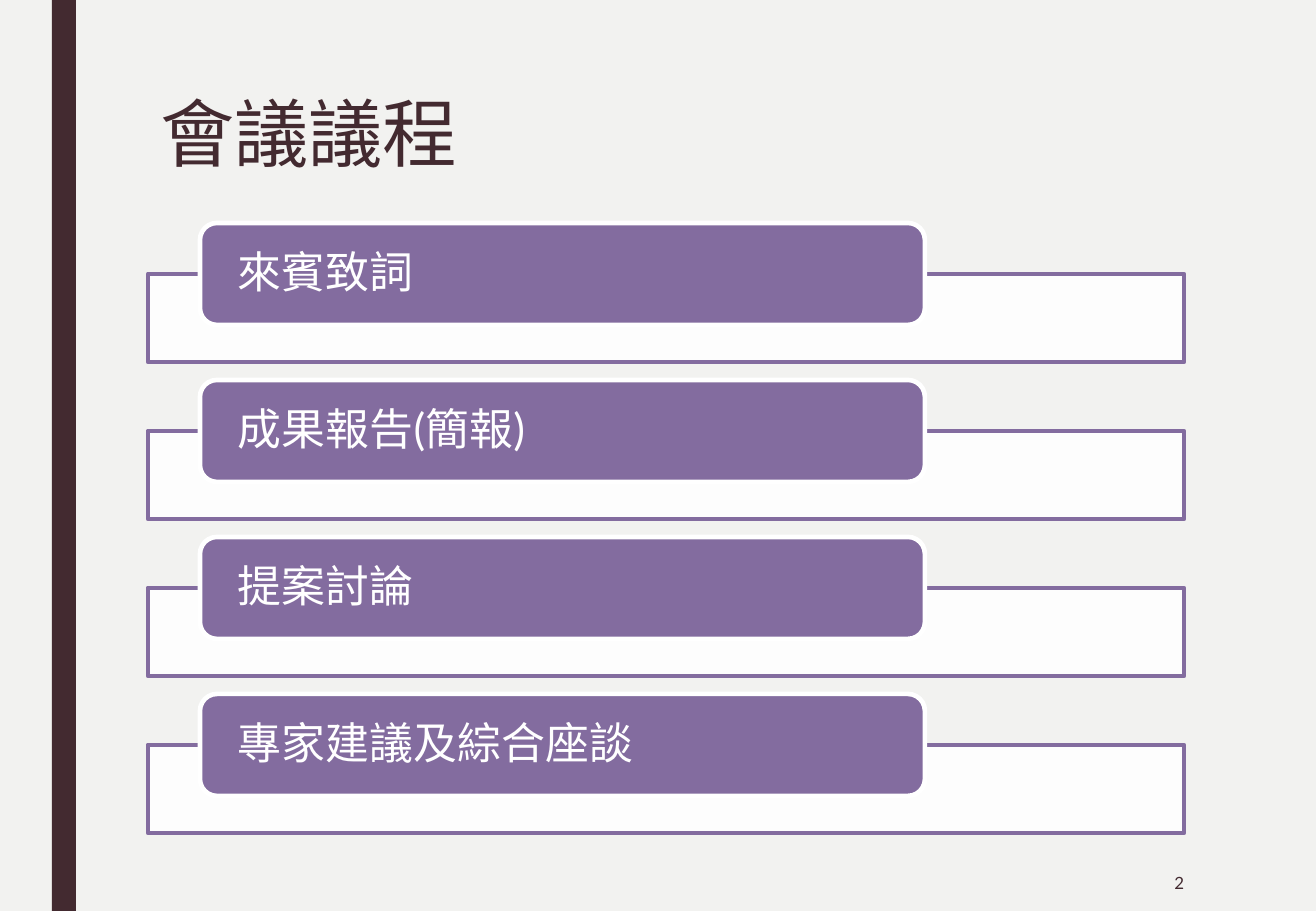
from dataclasses import dataclass

from lxml import etree
from pptx import Presentation
from pptx import util as u
from pptx.dml.color import RGBColor
from pptx.enum import shapes, text
from pptx.oxml.ns import qn


@dataclass(frozen=True)
class Theme:
    background: str = "F2F2F0"
    dark: str = "432A30"
    accent: str = "836C9F"
    white: str = "FFFFFF"
    font: str = "Lato"
    title_size: float = 44
    agenda_size: float = 26
    number_size: float = 10
    line_width: float = 2.75


theme = Theme()
PX = u.Inches(1) / 121.5
AGENDA = ["來賓致詞", "成果報告(簡報)", "提案討論", "專家建議及綜合座談"]
ROW_PITCH = 157


def px(*lengths):
    return [u.Emu(round(length * PX)) for length in lengths]


def write(shape, content, size, color, alignment, anchor, side_inset):
    """Fill the shape's text frame with one formatted paragraph."""
    frame = shape.text_frame
    frame.word_wrap = True
    frame.auto_size = text.MSO_AUTO_SIZE.NONE
    frame.vertical_anchor = anchor
    frame.margin_left, frame.margin_right = px(side_inset, side_inset)
    paragraph = frame.paragraphs[0]
    paragraph.text = content
    paragraph.alignment = alignment
    paragraph.line_spacing = 0.9
    paragraph.font.name = theme.font
    paragraph.font.size = u.Pt(size)
    paragraph.font.color.rgb = RGBColor.from_string(color)


presentation = Presentation()
presentation.slide_width, presentation.slide_height = px(1316, 911)
slide = presentation.slides.add_slide(presentation.slide_layouts[5])
slide.background.fill.solid()
slide.background.fill.fore_color.rgb = RGBColor.from_string(theme.background)

# Each entry: preset, place, fill, line
rectangle = shapes.MSO_SHAPE.RECTANGLE
rounded = shapes.MSO_SHAPE.ROUNDED_RECTANGLE
blocks = [(rectangle, (52, 0, 24, 911), theme.dark, None)]
for row in range(len(AGENDA)):
    offset = row * ROW_PITCH
    blocks.append((rectangle, (148, 274 + offset, 1036, 88), theme.white, theme.accent))
    blocks.append((rounded, (200, 223 + offset, 725, 102), theme.accent, theme.white))

agenda_items = iter(AGENDA)
for preset, place, fill, line in blocks:
    shape = slide.shapes.add_shape(preset, *px(*place))
    shape.shadow.inherit = False
    shape.fill.solid()
    shape.fill.fore_color.rgb = RGBColor.from_string(fill)
    if line is None:
        shape.line.fill.background()
    else:
        shape.line.color.rgb = RGBColor.from_string(line)
        shape.line.width = u.Pt(theme.line_width)
    if fill == theme.white:
        fill_color = shape.fill._xPr.find(qn("a:solidFill"))[0]
        etree.SubElement(fill_color, qn("a:alpha"), val="90000")
    if preset == rounded:
        write(shape, next(agenda_items), theme.agenda_size, theme.white,
              text.PP_ALIGN.LEFT, text.MSO_ANCHOR.MIDDLE, 33)

title = slide.shapes.title
title.left, title.top, title.width, title.height = px(148, 91, 1036, 197)
write(title, "會議議程", theme.title_size, theme.dark,
      text.PP_ALIGN.LEFT, text.MSO_ANCHOR.TOP, 12)

page_number = slide.shapes.add_textbox(*px(1023, 858, 173, 53))
write(page_number, "2", theme.number_size, theme.dark,
      text.PP_ALIGN.RIGHT, text.MSO_ANCHOR.MIDDLE, 12)

presentation.save("out.pptx")
